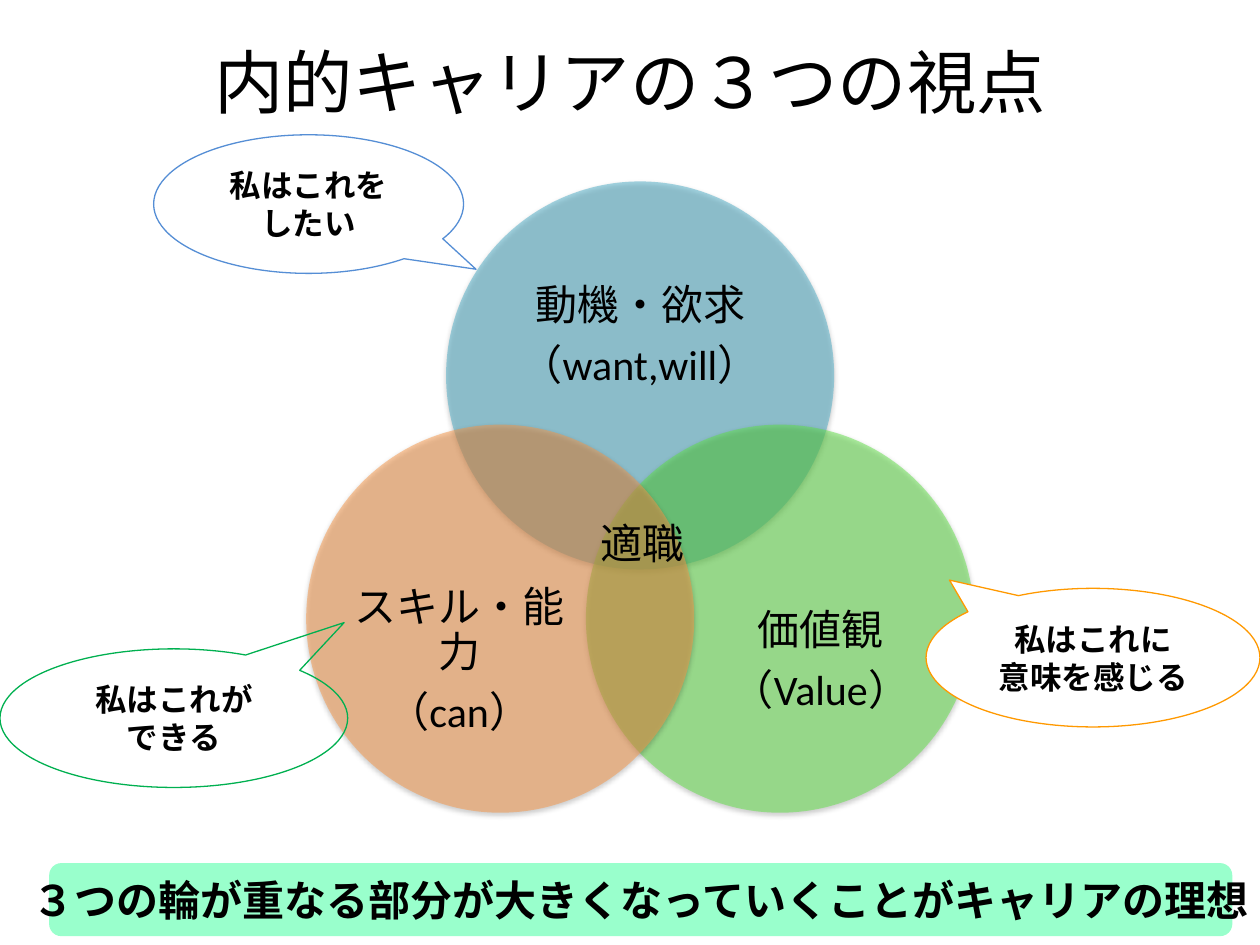
from lxml.etree import SubElement
from pptx import Presentation
from pptx.dml.color import RGBColor
from pptx.enum.shapes import MSO_SHAPE
from pptx.enum.text import MSO_ANCHOR, PP_ALIGN
from pptx.oxml.ns import qn
from pptx.util import Inches, Pt

BLACK = RGBColor(0x00, 0x00, 0x00)
WHITE = RGBColor(0xFF, 0xFF, 0xFF)
TEAL = RGBColor(0x4B, 0xAC, 0xC6)
LIME = RGBColor(0x60, 0xE1, 0x46)
ORANGE = RGBColor(0xF7, 0x96, 0x46)
BLUE_LINE = RGBColor(0x55, 0x8E, 0xD5)
GREEN_LINE = RGBColor(0x00, 0xB0, 0x50)
AMBER_LINE = RGBColor(0xFF, 0x99, 0x00)
MINT = RGBColor(0x99, 0xFF, 0xCC)

# Grid of 100 columns by 75 rows with square cells
prs = Presentation()
prs.slide_width, prs.slide_height = Inches(10), Inches(7.5)
CELL = prs.slide_width / 100


def cells(*lengths):
    return [round(length * CELL) for length in lengths]


def write(frame, lines, size, bold=False, align=PP_ALIGN.CENTER, wrap=True, margin=0):
    frame.word_wrap = wrap
    frame.vertical_anchor = MSO_ANCHOR.MIDDLE
    frame.margin_left = frame.margin_right = Inches(margin)
    frame.margin_top = frame.margin_bottom = Inches(margin / 2)
    for index, line in enumerate(lines):
        paragraph = frame.add_paragraph() if index else frame.paragraphs[0]
        paragraph.alignment = align
        run = paragraph.add_run()
        run.text = line
        run.font.name = "Calibri"
        run.font.size = Pt(size)
        run.font.bold = bold
        run.font.color.rgb = BLACK


slide = prs.slides.add_slide(prs.slide_layouts[5])

# Title
title = slide.shapes.title
title.left, title.top, title.width, title.height = cells(5, 3, 90, 6.9)
write(title.text_frame, ["内的キャリアの３つの視点"], 39.6, margin=0.1)

# Three overlapping circles, each followed by its label
DIAMETER = 30.8
MIDDLE, TOP = 50.8, 14.4
SIDE_STEP, DOWN_STEP = 11.1, 19.3
viewpoints = [
    # side, level, colour, label centre (column, row), label width, lines
    (0, 0, TEAL, 50.8, 26.7, 22.6, ["動機・欲求", "（want,will）"]),
    (1, 1, LIME, 65.15, 52.5, 18.5, ["価値観", "（Value）"]),
    (-1, 1, ORANGE, 36.45, 52.5, 18.5, ["スキル・能力", "（can）"]),
]
LABEL_HEIGHT = 13.8
for side, level, colour, column, row, width, lines in viewpoints:
    circle = slide.shapes.add_shape(MSO_SHAPE.OVAL, *cells(
        MIDDLE + side * SIDE_STEP - DIAMETER / 2, TOP + level * DOWN_STEP,
        DIAMETER, DIAMETER))
    circle.fill.solid()
    circle.fill.fore_color.rgb = colour
    circle.line.fill.background()

    # Half transparency and a soft shadow below
    properties = circle.fill._xPr
    fill_colour = properties.find(qn("a:solidFill")).find(qn("a:srgbClr"))
    SubElement(fill_colour, qn("a:alpha"), val="50000")
    circle.shadow.inherit = False
    shadow = SubElement(properties.find(qn("a:effectLst")), qn("a:outerShdw"),
                        blurRad=str(Pt(3.1)), dist=str(Pt(1.6)),
                        dir="5400000", rotWithShape="0")
    shadow_colour = SubElement(shadow, qn("a:srgbClr"), val=str(BLACK))
    SubElement(shadow_colour, qn("a:alpha"), val="38000")

    label = slide.shapes.add_textbox(*cells(
        column - width / 2, row - LABEL_HEIGHT / 2, width, LABEL_HEIGHT))
    write(label.text_frame, lines, 24)
    for paragraph in label.text_frame.paragraphs:
        paragraph.line_spacing = 0.9
        paragraph.space_after = Pt(8.4)

# Speech bubbles
bubbles = [
    # left, top, width, tip offset, line, fill, lines
    (12.2, 10.7, 24.6, (0.54, 0.47), BLUE_LINE, None, ["私はこれを", "したい"]),
    (0, 51.5, 27.6, (0.49, -0.69), GREEN_LINE, None, ["私はこれが", "できる"]),
    (73.5, 46.7, 26.5, (-0.43, -0.56), AMBER_LINE, WHITE, ["私はこれに", "意味を感じる"]),
]
for left, top, width, tip, line_colour, fill, lines in bubbles:
    bubble = slide.shapes.add_shape(MSO_SHAPE.OVAL_CALLOUT, *cells(left, top, width, 11))
    bubble.adjustments[0], bubble.adjustments[1] = tip
    bubble.shadow.inherit = False
    bubble.line.color.rgb = line_colour
    bubble.line.width = Pt(0.75)
    if fill is None:
        bubble.fill.background()
    else:
        bubble.fill.solid()
        bubble.fill.fore_color.rgb = fill
    write(bubble.text_frame, lines, 18, bold=True)

# Conclusion bar
conclusion = slide.shapes.add_shape(MSO_SHAPE.ROUNDED_RECTANGLE, *cells(3.9, 68.5, 93.9, 5.8))
conclusion.shadow.inherit = False
conclusion.fill.solid()
conclusion.fill.fore_color.rgb = MINT
conclusion.line.fill.background()
write(conclusion.text_frame, ["３つの輪が重なる部分が大きくなっていくことがキャリアの理想"],
      24, bold=True, wrap=False, margin=0.1)

# Shared centre of the circles
overlap = slide.shapes.add_textbox(*cells(46.7, 40.6, 11, 5))
write(overlap.text_frame, ["適職"], 24, align=PP_ALIGN.LEFT, margin=0.1)

prs.save("out.pptx")
